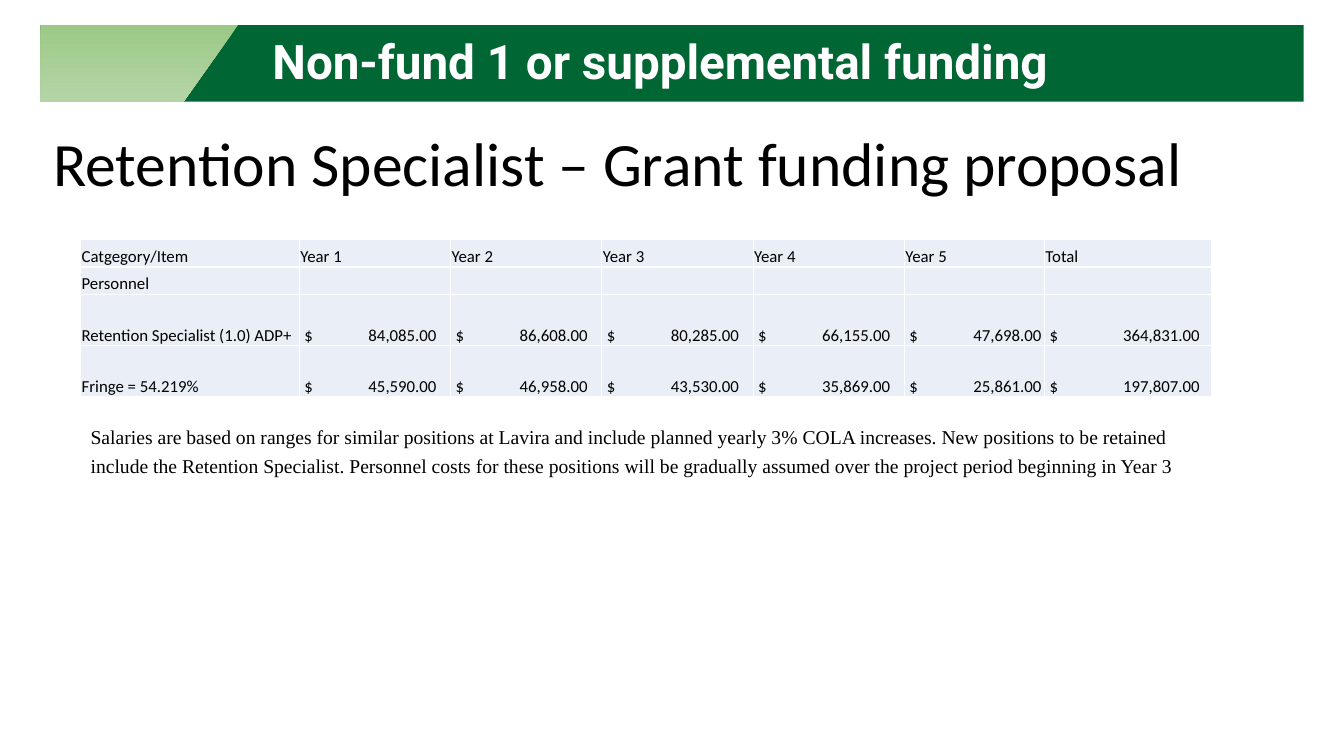
from dataclasses import dataclass

from lxml.etree import SubElement
from pptx import Presentation
from pptx.dml.color import RGBColor
from pptx.enum.shapes import MSO_SHAPE
from pptx.enum.text import MSO_ANCHOR as Anchor, PP_ALIGN as Align
from pptx.oxml.ns import qn
from pptx.util import Inches, Pt


@dataclass(frozen=True)
class Theme:
    green: RGBColor = RGBColor.from_string("006633")
    tab_top: RGBColor = RGBColor.from_string("9CC987")
    tab_bottom: RGBColor = RGBColor.from_string("B5D5A7")
    cell: RGBColor = RGBColor.from_string("EAEFF7")
    white: RGBColor = RGBColor.from_string("FFFFFF")
    black: RGBColor = RGBColor.from_string("000000")
    title_size: Pt = Pt(44)
    banner_size: Pt = Pt(34)
    note_size: Pt = Pt(14)
    table_size: Pt = Pt(12)


theme = Theme()


def style(para, font, size, color):
    for span in para.runs:
        span.font.name = font
        span.font.size = size
        span.font.color.rgb = color


def add_text(left, top, width, height, text, font, size, color):
    """Add a wrapped text box and return its frame and only paragraph."""
    box = page.shapes.add_textbox(Inches(left), Inches(top), Inches(width), Inches(height))
    frame = box.text_frame
    frame.word_wrap = True
    frame.text = text
    para = frame.paragraphs[0]
    style(para, font, size, color)
    return frame, para


deck = Presentation()
deck.slide_width = Inches(13.33)
deck.slide_height = Inches(7.5)
page = deck.slides.add_slide(deck.slide_layouts[6])

# Title
frame, para = add_text(0.43, 0.93, 11.5, 1.45, "Retention Specialist – Grant funding proposal",
                       "Calibri", theme.title_size, theme.black)
frame.vertical_anchor = Anchor.MIDDLE
para.line_spacing = 0.9

# Budget table
columns = [2.17, 1.5, 1.5, 1.5, 1.5, 1.39, 1.66]
heights = [0.27, 0.27, 0.51, 0.51]
budget = [
    ["Catgegory/Item", "Year 1", "Year 2", "Year 3", "Year 4", "Year 5", "Total"],
    ["Personnel"] + [""] * 6,
    ["Retention Specialist (1.0) ADP+", "84,085.00", "86,608.00", "80,285.00",
     "66,155.00", "47,698.00", "364,831.00"],
    ["Fringe = 54.219%", "45,590.00", "46,958.00", "43,530.00",
     "35,869.00", "25,861.00", "197,807.00"],
]
table = page.shapes.add_table(len(heights), len(columns), Inches(0.8), Inches(2.38),
                              Inches(sum(columns)), Inches(sum(heights))).table
for column, width in zip(table.columns, columns):
    column.width = Inches(width)
for row, height in zip(table.rows, heights):
    row.height = Inches(height)

for r, values in enumerate(budget):
    for c, value in enumerate(values):
        cell = table.cell(r, c)
        is_money = r > 1 and c > 0
        cell.vertical_anchor = Anchor.BOTTOM
        cell.margin_left = Inches(0.05 if is_money else 0.01)
        cell.margin_right = cell.margin_top = Inches(0.01)
        cell.margin_bottom = 0
        para = cell.text_frame.paragraphs[0]
        if is_money:
            para.text = f"$\t{value}"
            tabs = SubElement(para._p.get_or_add_pPr(), qn("a:tabLst"))
            stop = Inches(1.49 if values[c] == values[-1] else 1.31)
            SubElement(tabs, qn("a:tab"), pos=str(stop), algn="r")
        elif value:
            para.text = value
        else:
            SubElement(para._p, qn("a:endParaRPr"), sz=str(int(theme.table_size.pt * 100)))
        style(para, "Calibri", theme.table_size, theme.black)
        properties = cell._tc.get_or_add_tcPr()
        for side in ("a:lnL", "a:lnR", "a:lnT", "a:lnB"):
            line = SubElement(properties, qn(side), w=str(Pt(1)))
            SubElement(SubElement(line, qn("a:solidFill")), qn("a:srgbClr"), val=str(theme.white))
        cell.fill.solid()
        cell.fill.fore_color.rgb = theme.cell

# Banner
banner = page.shapes.add_shape(MSO_SHAPE.RECTANGLE, Inches(0.4), Inches(0.25),
                               Inches(12.53), Inches(0.76))
banner.shadow.inherit = False
banner.fill.solid()
banner.fill.fore_color.rgb = theme.green
banner.line.fill.background()

frame, para = add_text(0.8, 0.35, 11.5, 0.58, "Non-fund 1 or supplemental funding",
                       "Roboto", theme.banner_size, theme.white)
frame.vertical_anchor = Anchor.MIDDLE
para.alignment = Align.CENTER
para.line_spacing = 0.9
para.runs[0].font.bold = True

outline = page.shapes.build_freeform(Inches(0.4), Inches(0.25))
outline.add_line_segments([(Inches(x), Inches(y)) for x, y in
                           [(2.36, 0.25), (1.82, 1.01), (0.4, 1.01)]], close=True)
banner_tab = outline.convert_to_shape()
banner_tab.shadow.inherit = False
banner_tab.line.fill.background()
banner_tab.fill.gradient()
banner_tab.fill.gradient_angle = 270
for stop, color in zip(banner_tab.fill.gradient_stops, (theme.tab_top, theme.tab_bottom)):
    stop.color.rgb = color

# Note under the table
frame, para = add_text(
    0.8, 4.16, 11.21, 0.64,
    "Salaries are based on ranges for similar positions at Lavira and include planned yearly "
    "3% COLA increases. New positions to be retained include the Retention Specialist. "
    "Personnel costs for these positions will be gradually assumed over the project period "
    "beginning in Year 3",
    "Times New Roman", theme.note_size, theme.black)
frame.margin_top = 0
para.line_spacing = Pt(20.7)

deck.save("out.pptx")
